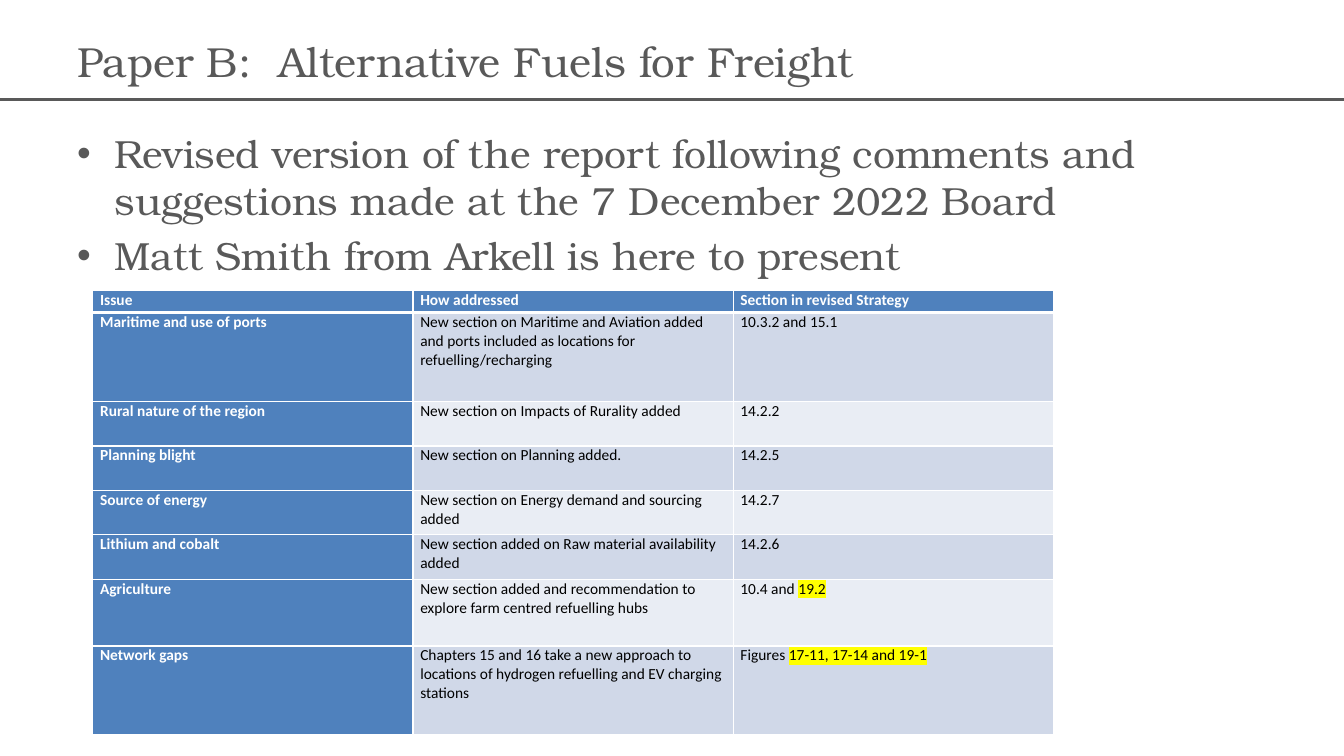
"""Build the slide on alternative fuels for freight."""
from lxml.etree import SubElement
from pptx import Presentation
from pptx.dml.color import RGBColor
from pptx.enum.shapes import MSO_CONNECTOR
from pptx.enum.text import MSO_ANCHOR
from pptx.oxml.ns import qn
from pptx.util import Pt

GREY = RGBColor(0x59, 0x59, 0x59)
WHITE = RGBColor(0xFF, 0xFF, 0xFF)
BLACK = RGBColor(0, 0, 0)
BLUE = RGBColor(0x4F, 0x81, 0xBD)
BANDS = (RGBColor(0xE9, 0xED, 0xF4), RGBColor(0xD0, 0xD8, 0xE8))
YELLOW = RGBColor(0xFF, 0xFF, 0)

WIDTH, HEIGHT = 960, 540
LINE_UNIT = 15.88
ROW_LINES = (1, 4, 2, 2, 2, 2, 3, 4)
COLUMN_WIDTH = 228.7

BULLETS = (
    "Revised version of the report following comments and suggestions made at the 7 December 2022 Board",
    "Matt Smith from Arkell is here to present",
)
ISSUES = (
    ("Issue", "How addressed", "Section in revised Strategy"),
    ("Maritime and use of ports",
     "New section on Maritime and Aviation added and ports included as locations for refuelling/recharging",
     "10.3.2 and 15.1"),
    ("Rural nature of the region", "New section on Impacts of Rurality added", "14.2.2"),
    ("Planning blight", "New section on Planning added.", "14.2.5"),
    ("Source of energy", "New section on Energy demand and sourcing added", "14.2.7"),
    ("Lithium and cobalt", "New section added on Raw material availability added", "14.2.6"),
    ("Agriculture",
     "New section added and recommendation to explore farm centred refuelling hubs",
     "10.4 and ", "19.2"),
    ("Network gaps",
     "Chapters 15 and 16 take a new approach to locations of hydrogen refuelling and EV charging stations",
     "Figures ", "17-11, 17-14 and 19-1"),
)


def add_color(parent, tag, color):
    holder = SubElement(parent, qn(tag))
    SubElement(holder, qn("a:srgbClr"), val=str(color))
    return holder


class SlideBuilder:
    def __init__(self, slide, heading_font, table_font):
        self.slide = slide
        self.heading_font = heading_font
        self.table_font = table_font

    def style(self, run, name, size, color, bold=False):
        run.font.name = name
        run.font.size = Pt(size)
        run.font.color.rgb = color
        run.font.bold = bold

    def rule(self, y, weight):
        divider = self.slide.shapes.add_connector(
            MSO_CONNECTOR.STRAIGHT, 0, Pt(y), Pt(WIDTH), Pt(y))
        divider.line.color.rgb = GREY
        divider.line.width = Pt(weight)
        SubElement(divider._element.spPr, qn("a:effectLst"))

    def text(self, lines, left, top, width, height, size,
             anchor=MSO_ANCHOR.TOP, bulleted=False):
        frame = self.slide.shapes.add_textbox(
            Pt(left), Pt(top), Pt(width), Pt(height)).text_frame
        frame.word_wrap = True
        frame.vertical_anchor = anchor
        frame.text = "\n".join(lines)
        for index, paragraph in enumerate(frame.paragraphs):
            if bulleted:
                self.bullet(paragraph)
            if index:
                paragraph.space_before = Pt(size * 0.2)
            self.style(paragraph.runs[0], self.heading_font, size, GREY)

    def bullet(self, paragraph):
        properties = paragraph._p.get_or_add_pPr()
        properties.set("marL", str(Pt(27)))
        properties.set("indent", str(-Pt(27)))
        add_color(properties, "a:buClr", GREY)
        SubElement(properties, qn("a:buFont"), typeface="Arial")
        SubElement(properties, qn("a:buChar"), char="•")

    def borders(self, cell, row):
        properties = cell._tc.get_or_add_tcPr()
        weights = {"L": 1, "R": 1, "T": 3 if row == 1 else 1, "B": 3 if row == 0 else 1}
        for side, weight in weights.items():
            edge = SubElement(properties, qn(f"a:ln{side}"), w=str(Pt(weight)))
            add_color(edge, "a:solidFill", WHITE)

    def highlight(self, run):
        properties = run._r.get_or_add_rPr()
        marker = add_color(properties, "a:highlight", YELLOW)
        properties.find(qn("a:latin")).addprevious(marker)

    def cell(self, cell, row, column, texts):
        cell.margin_left = cell.margin_right = Pt(5.2)
        cell.margin_top = cell.margin_bottom = 0
        self.borders(cell, row)
        heading = row == 0 or column == 0
        cell.fill.solid()
        cell.fill.fore_color.rgb = BLUE if heading else BANDS[row % 2]
        paragraph = cell.text_frame.paragraphs[0]
        paragraph.text = texts[0]
        for marked in texts[1:]:
            paragraph.add_run().text = marked
        for index, run in enumerate(paragraph.runs):
            self.style(run, self.table_font, 11, WHITE if heading else BLACK, heading)
            if index:
                self.highlight(run)

    def table(self, rows, left, top):
        table = self.slide.shapes.add_table(
            len(rows), 3, Pt(left), Pt(top), Pt(3 * COLUMN_WIDTH),
            Pt(sum(ROW_LINES) * LINE_UNIT)).table
        for column in table.columns:
            column.width = Pt(COLUMN_WIDTH)
        for row, (issue, answer, *sections) in enumerate(rows):
            table.rows[row].height = Pt(ROW_LINES[row] * LINE_UNIT)
            for column, texts in enumerate(([issue], [answer], sections)):
                self.cell(table.cell(row, column), row, column, texts)


def main():
    deck = Presentation()
    deck.slide_width, deck.slide_height = Pt(WIDTH), Pt(HEIGHT)
    slide = deck.slides.add_slide(deck.slide_layouts[6])
    builder = SlideBuilder(slide, "TeX Gyre Bonum", "Calibri")
    builder.rule(71.3, 2)
    builder.text(["Paper B:  Alternative Fuels for Freight"],
                 48, 21.6, 664.6, 44, 30, MSO_ANCHOR.MIDDLE)
    builder.text(BULLETS, 48, 88.6, 864, 302.4, 28, bulleted=True)
    builder.table(ISSUES, 66.3, 207.4)
    deck.save("out.pptx")


if __name__ == "__main__":
    main()
